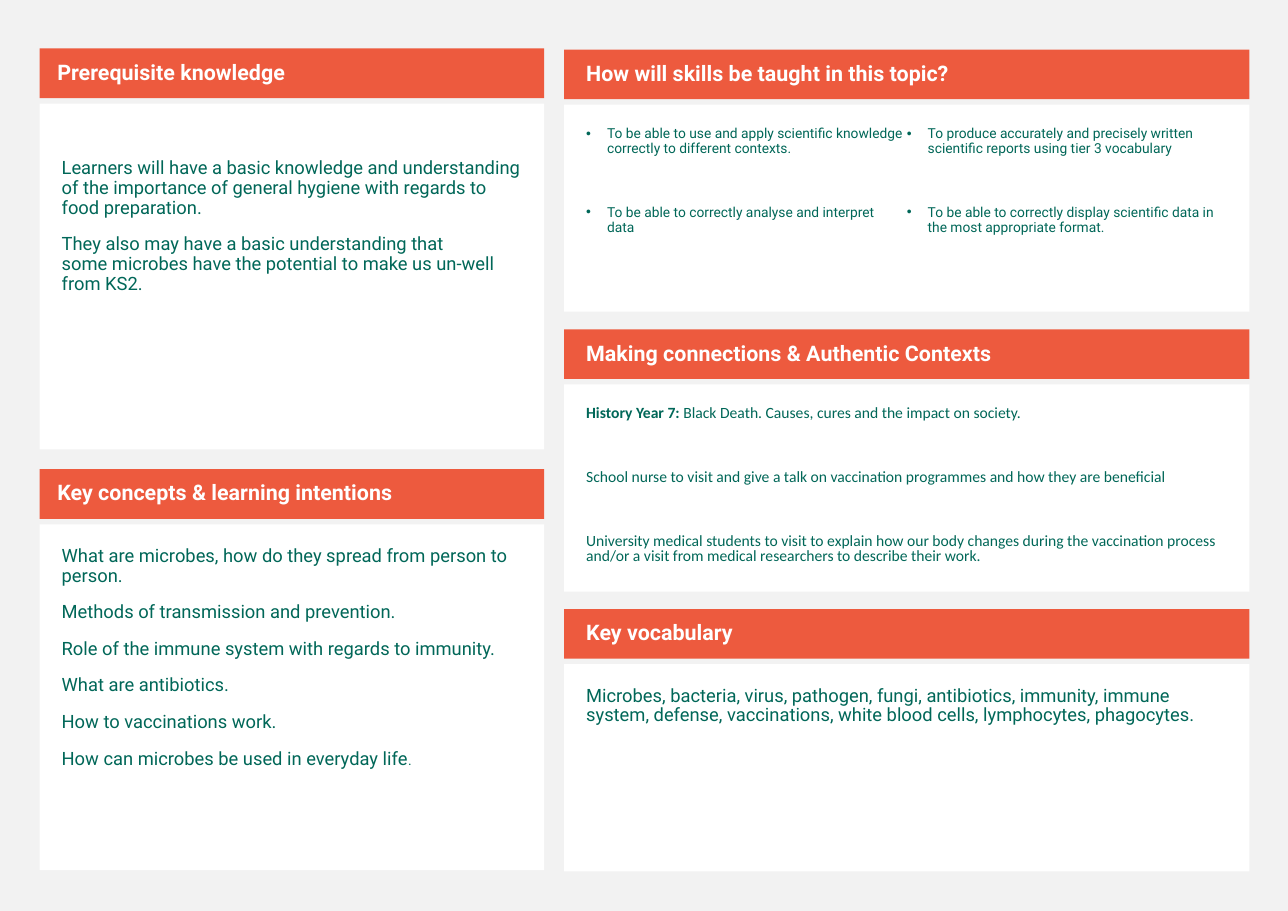
from dataclasses import dataclass

from lxml import etree
from pptx import Presentation
from pptx.dml.color import RGBColor
from pptx.enum import text
from pptx.oxml import ns
from pptx.shapes.autoshape import Shape
from pptx.slide import Slide
from pptx.util import Inches, Pt


@dataclass(frozen=True)
class Theme:
    page: RGBColor = RGBColor(0xF2, 0xF2, 0xF2)
    panel: RGBColor = RGBColor(0xFF, 0xFF, 0xFF)
    accent: RGBColor = RGBColor(0xED, 0x5A, 0x3E)
    ink: RGBColor = RGBColor(0x00, 0x67, 0x58)
    font: str = "Roboto"
    alt_font: str = "Calibri"
    heading: float = 14
    body: float = 12
    compact: float = 10.2
    small: float = 9


THEME = Theme()


@dataclass(frozen=True)
class Span:
    text: str
    size: float | None = None
    bold: bool = False


@dataclass(frozen=True)
class Style:
    color: RGBColor = THEME.ink
    size: float = THEME.body
    font: str = THEME.font
    leading: float = 0.9
    space_before: float = 11
    bullets: bool = False
    columns: int = 1


@dataclass(frozen=True)
class Box:
    left: float
    top: float
    width: float
    height: float


@dataclass(frozen=True)
class Panel:
    heading: str
    paragraphs: list[list[Span]]
    style: Style = Style()
    top_inset: float = 0.2


@dataclass(frozen=True)
class Column:
    left: float
    top: float
    width: float
    pitch: float
    body_height: float
    heading_inset: float
    panels: list[Panel]


HEADING_HEIGHT = 0.45
BODY_OFFSET = 0.5
BODY_INSET = 0.2
BULLET_INDENT = 0.19
HEADING_STYLE = Style(color=THEME.panel, size=THEME.heading)


def plain(*lines: str) -> list[list[Span]]:
    return [[Span(line)] for line in lines]


COLUMNS = [
    Column(0.36, 0.44, 4.58, 3.82, 3.14, 0.16, [
        Panel("Prerequisite knowledge", plain(
            "Learners will have a basic knowledge and understanding of the importance "
            "of general hygiene with regards to food preparation.",
            "They also may have a basic understanding that\nsome microbes have "
            "the potential to make us un-well from KS2.",
        ), top_inset=0.5),
        Panel("Key concepts & learning intentions", plain(
            "What are microbes, how do they spread from person to person.",
            "Methods of transmission and prevention.",
            "Role of the immune system with regards to immunity.",
            "What are antibiotics.",
            "How to vaccinations work.",
        ) + [[Span("How can microbes be used in everyday life"), Span(".", THEME.small)]]),
    ]),
    Column(5.12, 0.45, 6.22, 2.54, 1.88, 0.2, [
        Panel("How will skills be taught in this topic?", plain(
            "To be able to use and apply scientific knowledge correctly to different contexts.",
            "To be able to correctly analyse and interpret\ndata",
            "To produce accurately and precisely written scientific reports using tier 3 vocabulary",
            "To be able to correctly display scientific data in the most appropriate format.",
        ), Style(size=THEME.small, space_before=32, bullets=True, columns=2)),
        Panel("Making connections & Authentic Contexts", [
            [Span("History Year 7:", bold=True),
             Span(" Black Death. Causes, cures and the impact on society.")],
        ] + plain(
            "School nurse to visit and give a talk on vaccination programmes and how they are beneficial",
            "University medical students to visit to explain how our body changes during the "
            "vaccination process and/or a visit from medical researchers to describe their work.",
        ), Style(size=THEME.compact, font=THEME.alt_font, leading=0.8, space_before=32)),
        Panel("Key vocabulary", plain(
            "Microbes, bacteria, virus, pathogen, fungi, antibiotics, immunity, immune system, "
            "defense, vaccinations, white blood cells, lymphocytes, phagocytes.",
        )),
    ]),
]


def place(sp: Shape, box: Box, fill: RGBColor) -> None:
    sp.left, sp.top = Inches(box.left), Inches(box.top)
    sp.width, sp.height = Inches(box.width), Inches(box.height)
    sp.fill.solid()
    sp.fill.fore_color.rgb = fill


def set_insets(sp: Shape, left: float, top: float, right: float, bottom: float) -> None:
    tf = sp.text_frame
    tf.margin_left, tf.margin_top = Inches(left), Inches(top)
    tf.margin_right, tf.margin_bottom = Inches(right), Inches(bottom)


def set_bullet(p_pr: etree._Element, bullets: bool) -> None:
    indent = Inches(BULLET_INDENT) if bullets else 0
    p_pr.set("marL", str(indent))
    p_pr.set("indent", str(-indent))
    if bullets:
        etree.SubElement(p_pr, ns.qn("a:buFont")).set("typeface", "Arial")
        etree.SubElement(p_pr, ns.qn("a:buChar")).set("char", "•")
    else:
        etree.SubElement(p_pr, ns.qn("a:buNone"))


def write(sp: Shape, paragraphs: list[list[Span]], style: Style,
          anchor: text.MSO_ANCHOR) -> None:
    tf = sp.text_frame
    tf.word_wrap = True
    tf.auto_size = text.MSO_AUTO_SIZE.NONE
    tf.vertical_anchor = anchor
    if style.columns > 1:
        body_pr = tf._txBody.bodyPr
        body_pr.set("numCol", str(style.columns))
        body_pr.set("spcCol", "0")
    for i, spans in enumerate(paragraphs):
        p = tf.add_paragraph() if i else tf.paragraphs[0]
        p.alignment = text.PP_ALIGN.LEFT
        p.line_spacing = style.leading
        p.space_before, p.space_after = Pt(style.space_before), Pt(0)
        set_bullet(p._p.get_or_add_pPr(), style.bullets)
        for span in spans:
            for n, line in enumerate(span.text.split("\n")):
                if n:
                    p.add_line_break()
                    etree.SubElement(p._p[-1], ns.qn("a:rPr")).set("sz", str(int(style.size * 100)))
                r = p.add_run()
                r.text = line
                r.font.name = style.font
                r.font.size = Pt(span.size or style.size)
                r.font.bold = span.bold
                r.font.color.rgb = style.color


def draw_panels(slide: Slide) -> None:
    """Fill the layout's placeholders first, then add text boxes for the other panels."""
    titles = [slide.shapes.title]
    bodies = [sp for sp in slide.placeholders if sp.placeholder_format.idx]

    def next_shape(pool: list[Shape]) -> Shape:
        return pool.pop(0) if pool else slide.shapes.add_textbox(0, 0, 0, 0)

    for col in COLUMNS:
        for row, panel in enumerate(col.panels):
            top = col.top + row * col.pitch
            heading = next_shape(titles)
            place(heading, Box(col.left, top, col.width, HEADING_HEIGHT), THEME.accent)
            set_insets(heading, col.heading_inset, 0.05, 0.1, 0.05)
            write(heading, [[Span(panel.heading, bold=True)]], HEADING_STYLE,
                  text.MSO_ANCHOR.MIDDLE)
            body = next_shape(bodies)
            place(body, Box(col.left, top + BODY_OFFSET, col.width, col.body_height), THEME.panel)
            set_insets(body, BODY_INSET, panel.top_inset, BODY_INSET, BODY_INSET)
            write(body, panel.paragraphs, panel.style, text.MSO_ANCHOR.TOP)


def main() -> None:
    prs = Presentation()
    prs.slide_width, prs.slide_height = Inches(11.69), Inches(8.27)
    comparison = prs.slide_layouts[4]
    slide = prs.slides.add_slide(comparison)
    slide.background.fill.solid()
    slide.background.fill.fore_color.rgb = THEME.page
    draw_panels(slide)
    prs.save("out.pptx")


if __name__ == "__main__":
    main()
